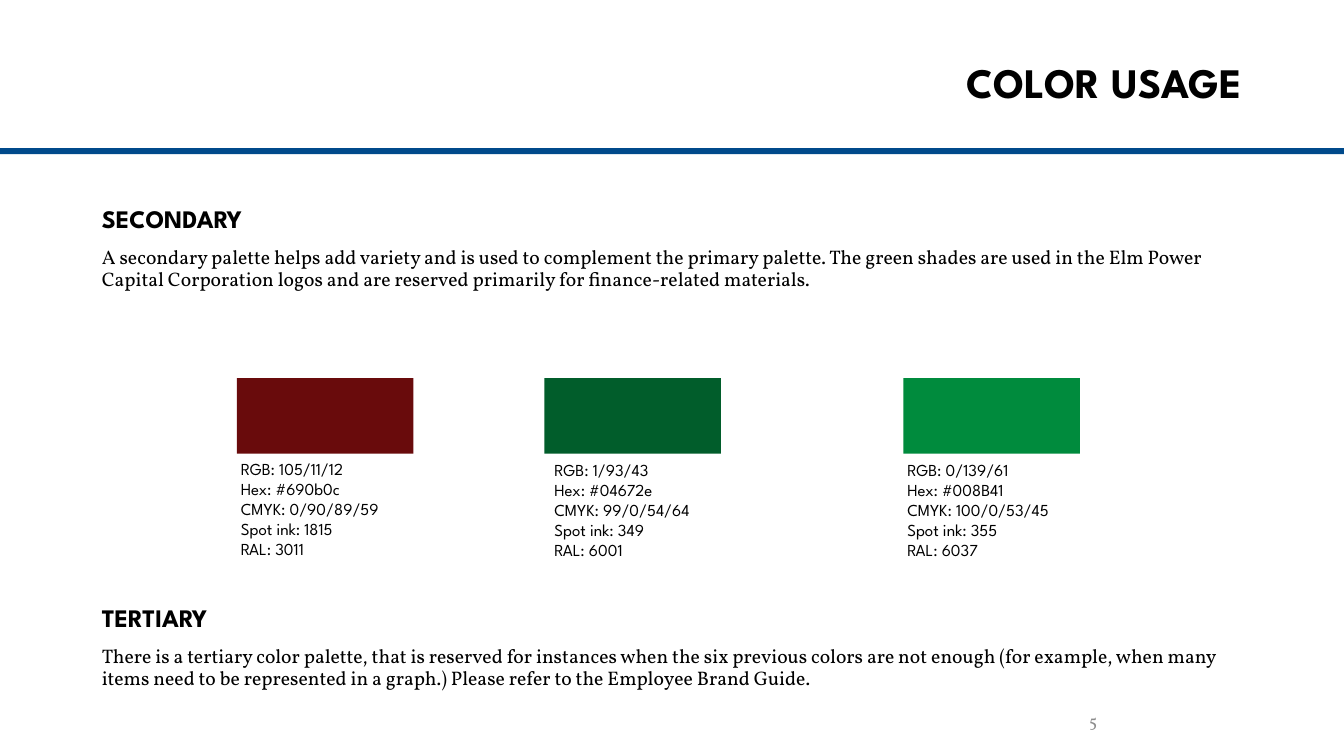
from pptx import Presentation
from pptx.dml.color import RGBColor
from pptx.enum.shapes import MSO_SHAPE
from pptx.enum.text import MSO_ANCHOR, MSO_AUTO_SIZE, PP_ALIGN
from pptx.oxml import parse_xml
from pptx.util import Inches, Pt

RECT = MSO_SHAPE.RECTANGLE
TOP, MIDDLE = MSO_ANCHOR.TOP, MSO_ANCHOR.MIDDLE
LEFT, RIGHT = PP_ALIGN.LEFT, PP_ALIGN.RIGHT
NO_FIT = MSO_AUTO_SIZE.NONE
NS = "http://schemas.openxmlformats.org/drawingml/2006/main"

# Theme: colours and text styles
THEME = {
    "rule": "004A8B",
    "title": dict(name="League Spartan", size=30, bold=True, color="000000"),
    "heading": dict(name="League Spartan", size=18, bold=True, color="000000"),
    "body": dict(name="Vollkorn", size=14, bold=False, color="000000"),
    "spec": dict(name="League Spartan", size=12, bold=False, color="000000"),
    "number": dict(name="Vollkorn", size=12, bold=False, color="8C8C8C"),
}

prs = Presentation()
prs.slide_width, prs.slide_height = Inches(13.33), Inches(7.5)
slide = prs.slides.add_slide(prs.slide_layouts.get_by_name("Two Content"))


def add_bar(x, y, w, h, color):
    sp = slide.shapes.add_shape(RECT, Inches(x), Inches(y), Inches(w), Inches(h))
    sp.shadow.inherit = False
    sp.fill.solid()
    sp.fill.fore_color.rgb = RGBColor.from_string(color)
    sp.line.fill.background()


def set_text(sp, box, lines, align=LEFT, anchor=TOP, spacing=1.0, before=0):
    """Place a text shape and write (style, text) lines, one per paragraph."""
    sp.left, sp.top, sp.width, sp.height = map(Inches, box)
    tf = sp.text_frame
    for key, value in dict(word_wrap=True, auto_size=NO_FIT, vertical_anchor=anchor).items():
        setattr(tf, key, value)
    for i, (style, text) in enumerate(lines):
        p = tf.paragraphs[0] if i == 0 else tf.add_paragraph()
        pPr = p._p.get_or_add_pPr()
        pPr.set("marL", "0")
        pPr.set("indent", "0")
        pPr.append(parse_xml(f'<a:buNone xmlns:a="{NS}"/>'))
        formats = dict(alignment=align, line_spacing=spacing,
                       space_before=Pt(before if i else 0), space_after=Pt(0))
        for key, value in formats.items():
            setattr(p, key, value)
        r = p.add_run()
        r.text = text
        font = THEME[style]
        r.font.name, r.font.size, r.font.bold = font["name"], Pt(font["size"]), font["bold"]
        r.font.color.rgb = RGBColor.from_string(font["color"])


# Title and rule
add_bar(0, 1.47, 13.33, 0.06, THEME["rule"])
set_text(slide.shapes.title, (2.63, 0.4, 9.79, 0.88), [("title", "COLOR USAGE")],
         align=RIGHT, anchor=MIDDLE, spacing=0.9)

# Palette sections
sections = [
    (1, 2.0, "SECONDARY",
     "A secondary palette helps add variety and is used to complement the primary "
     "palette. The green shades are used in the Elm Power Capital Corporation logos "
     "and are reserved primarily for finance-related materials."),
    (2, 5.96, "TERTIARY",
     "There is a tertiary color palette, that is reserved for instances when the six "
     "previous colors are not enough (for example, when many items need to be "
     "represented in a graph.) Please refer to the Employee Brand Guide."),
]
for idx, y, heading, body in sections:
    set_text(slide.placeholders[idx], (0.91, y, 11.51, 1.39),
             [("heading", heading), ("body", body)], spacing=0.9, before=10)

# Swatches with their colour values
LABELS = ("RGB", "Hex", "CMYK", "Spot ink", "RAL")
swatches = [
    (2.35, 2.29, 4.5, "690B0C", ("105/11/12", "#690b0c", "0/90/89/59", "1815", "3011")),
    (5.4, 5.4, 4.51, "015D2B", ("1/93/43", "#04672e", "99/0/54/64", "349", "6001")),
    (8.96, 8.9, 4.51, "008B3D", ("0/139/61", "#008B41", "100/0/53/45", "355", "6037")),
]
for x, text_x, text_y, color, values in swatches:
    add_bar(x, 3.75, 1.75, 0.75, color)
    lines = [("spec", f"{label}: {value}") for label, value in zip(LABELS, values)]
    set_text(slide.shapes.add_textbox(0, 0, 0, 0), (text_x, text_y, 2.38, 1.11), lines)

# Page number
set_text(slide.shapes.add_textbox(0, 0, 0, 0), (8.73, 6.95, 2.25, 0.4),
         [("number", "5")], align=RIGHT, anchor=MIDDLE)

prs.save("out.pptx")
